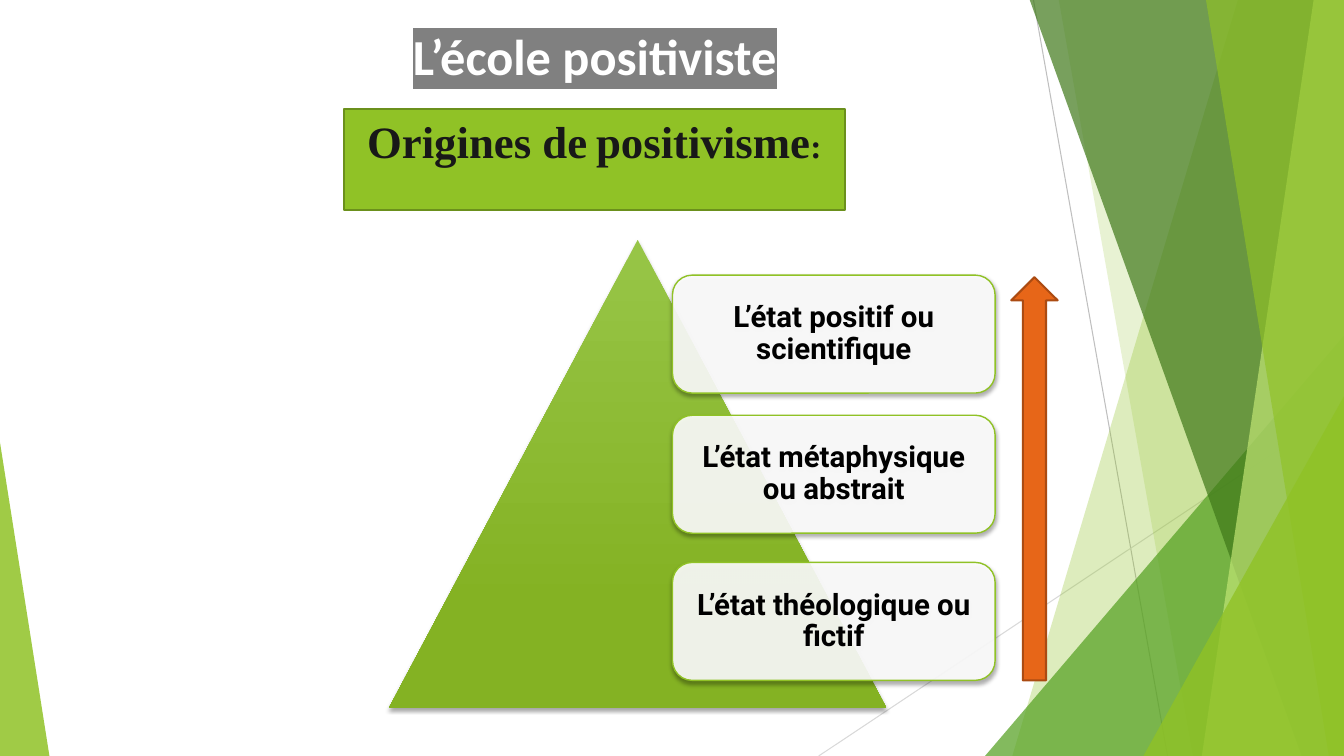
"""Build the slide on the origins of positivism and its three states."""
from dataclasses import dataclass
from typing import Optional

from lxml import etree
from pptx import Presentation
from pptx.dml.color import RGBColor
from pptx.enum.shapes import MSO_CONNECTOR, MSO_SHAPE
from pptx.enum.text import MSO_ANCHOR, PP_ALIGN
from pptx.oxml.ns import qn
from pptx.util import Pt

PX = 9144
WIDTH, HEIGHT = 1333, 750
TITLE_ONLY = 5

STRAIGHT = MSO_CONNECTOR.STRAIGHT
TRIANGLE = MSO_SHAPE.ISOSCELES_TRIANGLE
RECTANGLE = MSO_SHAPE.RECTANGLE
ROUNDED = MSO_SHAPE.ROUNDED_RECTANGLE
UP_ARROW = MSO_SHAPE.UP_ARROW
TOP, MIDDLE = MSO_ANCHOR.TOP, MSO_ANCHOR.MIDDLE
CENTER = PP_ALIGN.CENTER

WHITE = RGBColor(0xFF, 0xFF, 0xFF)
BLACK = RGBColor(0x00, 0x00, 0x00)
INK = RGBColor(0x18, 0x18, 0x18)
GRAY = RGBColor(0x80, 0x80, 0x80)
SILVER = RGBColor(0xBF, 0xBF, 0xBF)
PALE_GRAY = RGBColor(0xD9, 0xD9, 0xD9)
LIME = RGBColor(0x90, 0xC2, 0x26)
GREEN = RGBColor(0x54, 0xA0, 0x21)
FOREST = RGBColor(0x3F, 0x78, 0x19)
PALE_LIME = RGBColor(0xC0, 0xE4, 0x74)
OLIVE = RGBColor(0x6B, 0x90, 0x1C)
PEAK_GREEN = RGBColor(0x97, 0xC5, 0x47)
BASE_GREEN = RGBColor(0x84, 0xB2, 0x23)
ORANGE = RGBColor(0xE7, 0x66, 0x18)
RUST = RGBColor(0xAB, 0x4B, 0x12)


@dataclass(frozen=True)
class Ray:
    start: tuple[int, int]
    end: tuple[int, int]
    color: RGBColor


@dataclass(frozen=True)
class Band:
    top_left: int
    bottom_left: int
    color: RGBColor
    opacity: int


@dataclass(frozen=True)
class Wedge:
    left: int
    top: int
    width: int
    apex: int
    color: RGBColor
    opacity: int


@dataclass(frozen=True)
class Block:
    kind: int
    frame: tuple[int, int, int, int]
    fill: Optional[RGBColor] = None
    line: Optional[RGBColor] = None
    weight: float = 1.5


@dataclass(frozen=True)
class Span:
    text: str
    size: int
    font: str
    color: RGBColor


RAYS = (
    Ray((1025, 0), (1158, HEIGHT), SILVER),
    Ray((WIDTH, 403), (812, HEIGHT), PALE_GRAY),
)
BACKDROP = (
    Band(1228, 1004, LIME, 30),
    Band(1050, 1183, LIME, 20),
    Wedge(977, 333, 356, 1, GREEN, 72),
    Band(1021, 1291, FOREST, 70),
    Band(1303, 1192, PALE_LIME, 70),
    Band(1196, 1318, LIME, 65),
    Wedge(1134, 393, 199, 1, LIME, 80),
    Wedge(0, 439, 49, 0, LIME, 85),
)
TITLE = Span("L’école positiviste", 36, "Calibri", WHITE)
HEADING = (
    Span("Origines de", 32, "Times New Roman", INK),
    Span(" ", 24, "Times New Roman", INK),
    Span("positivisme", 32, "Times New Roman", INK),
    Span(":", 24, "Times New Roman", INK),
)
STATES = (
    (273, "L’état positif ou scientifique"),
    (412, "L’état métaphysique ou abstrait"),
    (558, "L’état théologique ou fictif"),
)


def place(item, frame: tuple[int, int, int, int]) -> None:
    """Move and size an item to a frame in px."""
    for name, value in zip(("left", "top", "width", "height"), frame):
        setattr(item, name, value * PX)


def paint(shape, color: RGBColor, opacity: int = 100) -> None:
    """Fill a shape with a colour at an opacity in percent."""
    shape.fill.solid()
    shape.fill.fore_color.rgb = color
    if opacity < 100:
        node = shape.fill._xPr.find(qn("a:solidFill"))[0]
        etree.SubElement(node, qn("a:alpha"), val=str(opacity * 1000))


def cast_shadow(shape) -> None:
    """Give a shape a soft shadow below it."""
    effects = shape.element.spPr.find(qn("a:effectLst"))
    shadow = etree.SubElement(effects, qn("a:outerShdw"), blurRad=str(Pt(3)),
                              dist=str(Pt(2)), dir="5400000", rotWithShape="0")
    color = etree.SubElement(shadow, qn("a:srgbClr"), val=str(BLACK))
    etree.SubElement(color, qn("a:alpha"), val="35000")


def draw_ray(page, ray: Ray) -> None:
    """Draw one thin backdrop line."""
    points = [value * PX for value in (*ray.start, *ray.end)]
    line = page.shapes.add_connector(STRAIGHT, *points)
    line.line.color.rgb = ray.color
    line.line.width = Pt(0.75)
    etree.SubElement(line.element.spPr, qn("a:effectLst"))


def draw_backdrop(page, piece: Band | Wedge) -> None:
    """Draw a translucent band to the right edge, or a corner wedge."""
    if isinstance(piece, Band):
        builder = page.shapes.build_freeform(piece.top_left, -1, scale=PX)
        builder.add_line_segments(
            [(WIDTH, -1), (WIDTH, HEIGHT), (piece.bottom_left, HEIGHT)])
        shape = builder.convert_to_shape()
    else:
        frame = (piece.left, piece.top, piece.width, HEIGHT - piece.top)
        shape = page.shapes.add_shape(TRIANGLE, *(value * PX for value in frame))
        shape.adjustments[0] = piece.apex
    shape.shadow.inherit = False
    shape.line.fill.background()
    paint(shape, piece.color, piece.opacity)


def draw_block(page, block: Block, opacity: int = 100):
    """Draw a preset shape and return it."""
    shape = page.shapes.add_shape(block.kind, *(value * PX for value in block.frame))
    shape.shadow.inherit = False
    if block.fill is not None:
        paint(shape, block.fill, opacity)
    if block.line is None:
        shape.line.fill.background()
    else:
        shape.line.color.rgb = block.line
        shape.line.width = Pt(block.weight)
    return shape


def write(shape, spans: tuple[Span, ...], anchor=MIDDLE) -> None:
    """Write bold centred spans as one paragraph."""
    frame = shape.text_frame
    for name, value in {"word_wrap": True, "vertical_anchor": anchor}.items():
        setattr(frame, name, value)
    para = frame.paragraphs[0]
    para.alignment = CENTER
    for span in spans:
        run = para.add_run()
        run.text = span.text
        formats = {"size": Pt(span.size), "name": span.font, "bold": True}
        for name, value in formats.items():
            setattr(run.font, name, value)
        run.font.color.rgb = span.color


def draw_title(page) -> None:
    """Format the title with its highlight, in front of the backdrop."""
    title = page.shapes.title
    title.element.getparent().append(title.element)
    place(title, (15, 16, 1150, 78))
    write(title, (TITLE,))
    properties = title.text_frame.paragraphs[0].runs[0].font._element
    highlight = etree.Element(qn("a:highlight"))
    etree.SubElement(highlight, qn("a:srgbClr"), val=str(GRAY))
    properties.find(qn("a:solidFill")).addnext(highlight)


def draw_pyramid(page) -> None:
    """Draw the gradient pyramid and the three states on it."""
    pyramid = draw_block(page, Block(TRIANGLE, (386, 238, 493, 464)))
    pyramid.fill.gradient()
    pyramid.fill.gradient_angle = 270
    stops = ((0, PEAK_GREEN), (0.78, BASE_GREEN))
    for stop, (position, color) in zip(pyramid.fill.gradient_stops, stops):
        stop.position = position
        stop.color.rgb = color
    cast_shadow(pyramid)
    for top, text in STATES:
        box = draw_block(page, Block(ROUNDED, (667, top, 320, 117), WHITE, LIME, 1), 90)
        cast_shadow(box)
        write(box, (Span(text, 21, "Roboto", BLACK),))
        box.text_frame.paragraphs[0].line_spacing = 0.9
        for side in ("left", "top", "right", "bottom"):
            setattr(box.text_frame, f"margin_{side}", 9 * PX)


def main() -> None:
    """Build and save the deck."""
    deck = Presentation()
    deck.slide_width, deck.slide_height = WIDTH * PX, HEIGHT * PX
    page = deck.slides.add_slide(deck.slide_layouts[TITLE_ONLY])
    for ray in RAYS:
        draw_ray(page, ray)
    for piece in BACKDROP:
        draw_backdrop(page, piece)
    draw_title(page)
    banner = draw_block(page, Block(RECTANGLE, (341, 108, 497, 100), LIME, OLIVE))
    write(banner, HEADING, TOP)
    draw_pyramid(page)
    draw_block(page, Block(UP_ARROW, (1003, 275, 46, 400), ORANGE, RUST))
    deck.save("out.pptx")


if __name__ == "__main__":
    main()
